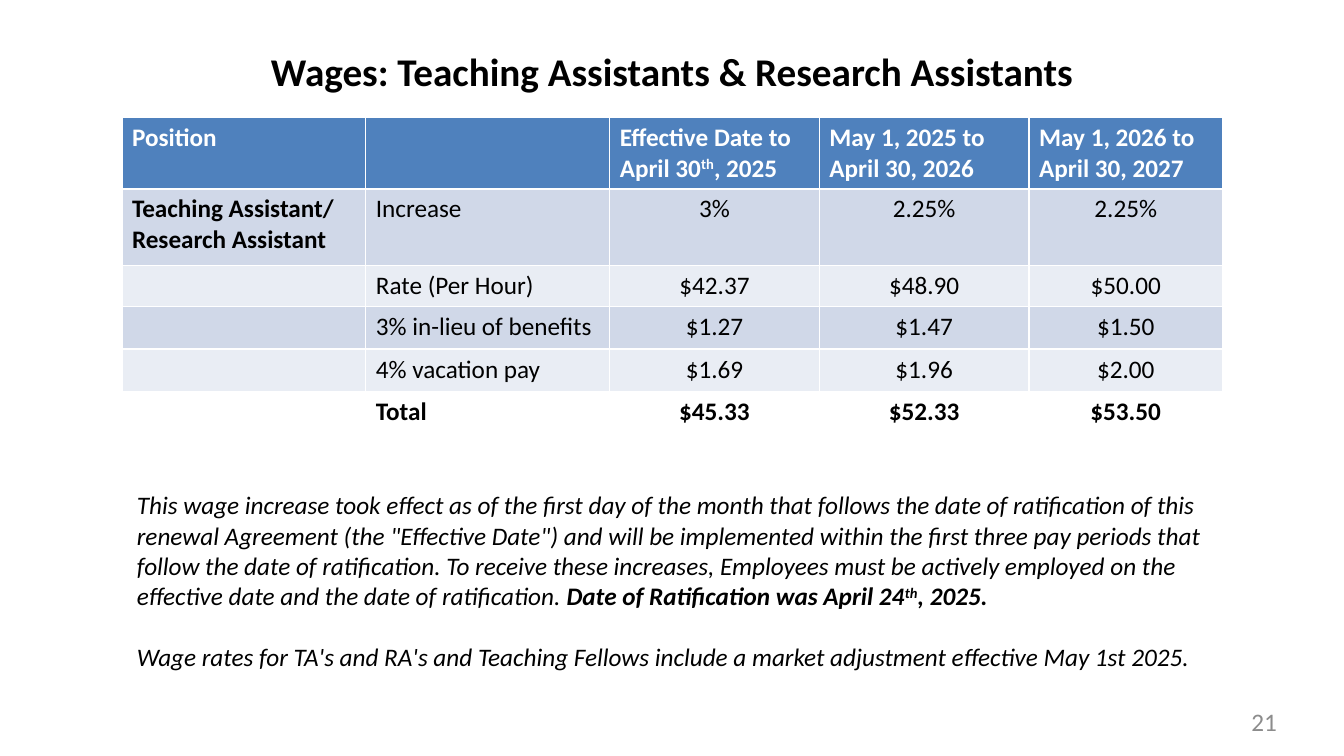
from pptx import Presentation
from pptx.dml.color import RGBColor
from pptx.enum import text
from pptx.util import Pt

COLORS = {"header": "4F81BD", "dark_band": "D0D8E8", "light_band": "E9EDF4",
          "white": "FFFFFF", "black": "000000", "gray": "8C8C8C"}
FONT = "Calibri"


def add_span(para, words, color="black", size=18, bold=False, italic=False, raised=False):
    span = para.add_run()
    span.text = words
    font = span.font
    font.name, font.size, font.bold, font.italic = FONT, Pt(size), bold, italic
    font.color.rgb = RGBColor.from_string(COLORS[color])
    if raised:
        span._r.get_or_add_rPr().set("baseline", "30000")


def add_box(left, top, width, height):
    box = page.shapes.add_textbox(Pt(left), Pt(top), Pt(width), Pt(height))
    box.text_frame.word_wrap = True
    return box.text_frame


deck = Presentation()
deck.slide_width, deck.slide_height = Pt(960), Pt(540)
page = deck.slides.add_slide(deck.slide_layouts[5])

title = page.shapes.title
title.left, title.top, title.width, title.height = Pt(131.8), Pt(30.2), Pt(696.2), Pt(41)
title.text_frame.auto_size = text.MSO_AUTO_SIZE.NONE
add_span(title.text_frame.paragraphs[0], "Wages: Teaching Assistants & Research Assistants", size=28, bold=True)

rows = [
    ["Position", "", "Effective Date to April 30|th|, 2025",
     "May 1, 2025 to April 30, 2026", "May 1, 2026 to April 30, 2027"],
    ["Teaching Assistant/\nResearch Assistant", "Increase", "3%", "2.25%", "2.25%"],
    ["", "Rate (Per Hour)", "$42.37", "$48.90", "$50.00"],
    ["", "3% in-lieu of benefits", "$1.27", "$1.47", "$1.50"],
    ["", "4% vacation pay", "$1.69", "$1.96", "$2.00"],
    ["", "Total", "$45.33", "$52.33", "$53.50"],
]
row_heights = [50.4, 54.7, 29.5, 30.2, 30.2, 33.8]
column_widths = [174.2, 174.2, 149.8, 149.8, 138.2]
row_fills = ["header", "dark_band", "light_band", "dark_band", "light_band", None]

wages = page.shapes.add_table(len(rows), len(column_widths), Pt(87.1), Pt(83.8),
                              Pt(sum(column_widths)), Pt(sum(row_heights))).table
for column, width in zip(wages.columns, column_widths):
    column.width = Pt(width)
for row_index, (values, height, band) in enumerate(zip(rows, row_heights, row_fills)):
    wages.rows[row_index].height = Pt(height)
    is_header = row_index == 0
    is_total = row_index == len(rows) - 1
    for column_index, value in enumerate(values):
        cell = wages.cell(row_index, column_index)
        if band:
            cell.fill.solid()
            cell.fill.fore_color.rgb = RGBColor.from_string(COLORS[band])
        else:
            cell.fill.background()
        frame = cell.text_frame
        for line_index, line in enumerate(value.split("\n") if value else []):
            para = frame.add_paragraph() if line_index else frame.paragraphs[0]
            if column_index >= 2 and not is_header:
                para.alignment = text.PP_ALIGN.CENTER
            for part_index, words in enumerate(line.split("|")):
                add_span(para, words, "white" if is_header else "black",
                         bold=is_header or is_total or column_index == 0,
                         raised=part_index == 1)

notice = add_box(90.7, 346.3, 803.5, 159.8)
para = notice.paragraphs[0]
add_span(para, "This wage increase took effect as of the first day of the month that follows "
         "the date of ratification of this renewal Agreement (the \"Effective Date\") and will be "
         "implemented within the first three pay periods that follow the date of ratification. "
         "To receive these increases, Employees must be actively employed on the effective date "
         "and the date of ratification. ", italic=True)
for words in ["Date of Ratification was April 24", "th", ", 2025."]:
    add_span(para, words, bold=True, italic=True, raised=words == "th")
para = notice.add_paragraph()
para.space_before = Pt(22)
add_span(para, "Wage rates for TA's and RA's and Teaching Fellows include a market adjustment "
         "effective May 1st 2025.", italic=True)

page_number = add_box(691.2, 501.8, 221, 27.4)
page_number.margin_left = page_number.margin_right = 0
page_number.margin_top = page_number.margin_bottom = 0
page_number.vertical_anchor = text.MSO_ANCHOR.MIDDLE
para = page_number.paragraphs[0]
para.alignment = text.PP_ALIGN.RIGHT
add_span(para, "21", "gray")

deck.save("out.pptx")
